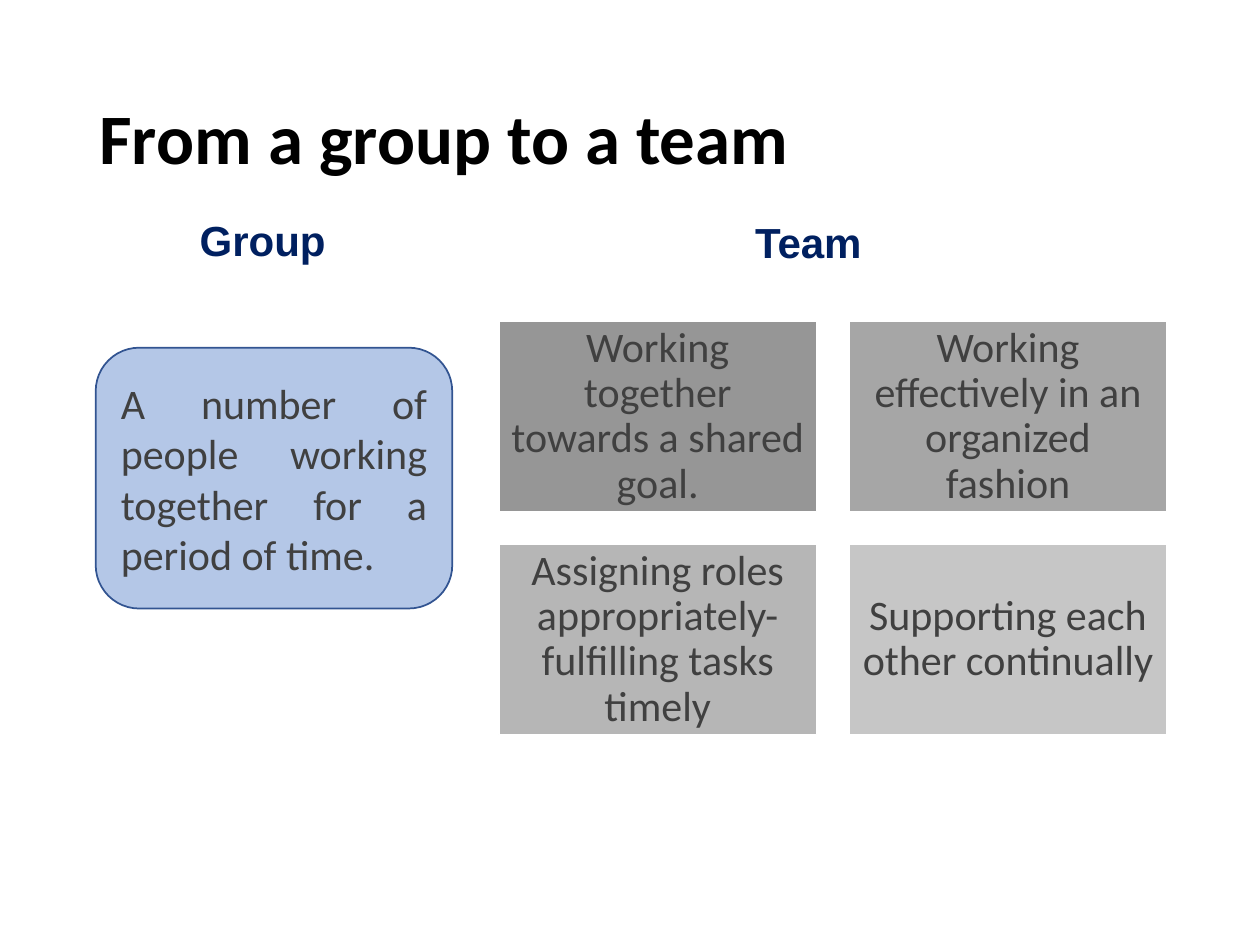
from pptx import Presentation
from pptx.dml.color import RGBColor
from pptx.enum.shapes import MSO_SHAPE as Shape
from pptx.enum.text import MSO_ANCHOR as Anchor, MSO_AUTO_SIZE as AutoSize, PP_ALIGN as Align
from pptx.util import Inches, Pt

COLORS = {
    "title": "000000",
    "heading": "002060",
    "body": "404040",
    "group_fill": "B4C7E7",
    "group_line": "325491",
    "card_line": "FFFFFF",
}
TEAM_CARDS = [
    ("Working together towards a shared goal.", "969696"),
    ("Working effectively in an organized fashion", "A6A6A6"),
    ("Assigning roles appropriately- fulfilling tasks timely", "B6B6B6"),
    ("Supporting each other continually", "C6C6C6"),
]
GRID_COLUMNS = 2
GRID_LEFT, GRID_TOP = 3.96, 2.55
CARD_WIDTH, CARD_HEIGHT = 2.52, 1.51
GAP = 0.26


def rgb(value):
    return RGBColor.from_string(value)


def write(shape, text, size, color, font="Calibri", bold=False,
          align=Align.LEFT, anchor=Anchor.MIDDLE, spacing=None):
    frame = shape.text_frame
    frame.word_wrap = True
    frame.vertical_anchor = anchor
    paragraph = frame.paragraphs[0]
    paragraph.alignment = align
    paragraph.line_spacing = spacing
    run = paragraph.add_run()
    run.text = text
    run.font.name = font
    run.font.size = Pt(size)
    run.font.bold = bold
    run.font.color.rgb = rgb(color)


def add_text(slide, box, text, size, color, **style):
    shape = slide.shapes.add_textbox(*map(Inches, box))
    write(shape, text, size, color, **style)
    return shape


def add_heading(slide, left, top, text):
    shape = add_text(slide, (left, top, 1.65, 0.5), text, 24, COLORS["heading"],
                     font="Arial", bold=True, align=Align.CENTER, anchor=Anchor.TOP)
    shape.text_frame.auto_size = AutoSize.SHAPE_TO_FIT_TEXT


def add_panel(slide, kind, box, fill, line, text, **style):
    shape = slide.shapes.add_shape(kind, *map(Inches, box))
    shape.shadow.inherit = False
    shape.fill.solid()
    shape.fill.fore_color.rgb = rgb(fill)
    shape.line.color.rgb = rgb(line)
    shape.line.width = Pt(1)
    write(shape, text, 24, COLORS["body"], **style)
    return shape


def add_team_cards(slide):
    for index, (text, fill) in enumerate(TEAM_CARDS):
        row, column = divmod(index, GRID_COLUMNS)
        box = (GRID_LEFT + column * (CARD_WIDTH + GAP),
               GRID_TOP + row * (CARD_HEIGHT + GAP), CARD_WIDTH, CARD_HEIGHT)
        card = add_panel(slide, Shape.RECTANGLE, box, fill, COLORS["card_line"],
                         text, align=Align.CENTER, spacing=0.9)
        frame = card.text_frame
        frame.margin_left = frame.margin_right = Inches(0.1)
        frame.margin_top = frame.margin_bottom = Inches(0.1)


def main():
    presentation = Presentation()
    presentation.slide_width = Inches(10)
    presentation.slide_height = Inches(7.5)
    slide = presentation.slides.add_slide(presentation.slide_layouts[6])
    add_text(slide, (0.69, 0.4, 8.62, 1.45), "From a group to a team", 40.5,
             COLORS["title"], bold=True, spacing=0.9)
    add_team_cards(slide)
    add_panel(slide, Shape.ROUNDED_RECTANGLE, (0.76, 2.76, 2.83, 2.07),
              COLORS["group_fill"], COLORS["group_line"],
              "A number of people working together for a period of time.",
              align=Align.JUSTIFY)
    add_heading(slide, 1.26, 1.65, "Group")
    add_heading(slide, 5.59, 1.67, "Team")
    presentation.save("out.pptx")


if __name__ == "__main__":
    main()
